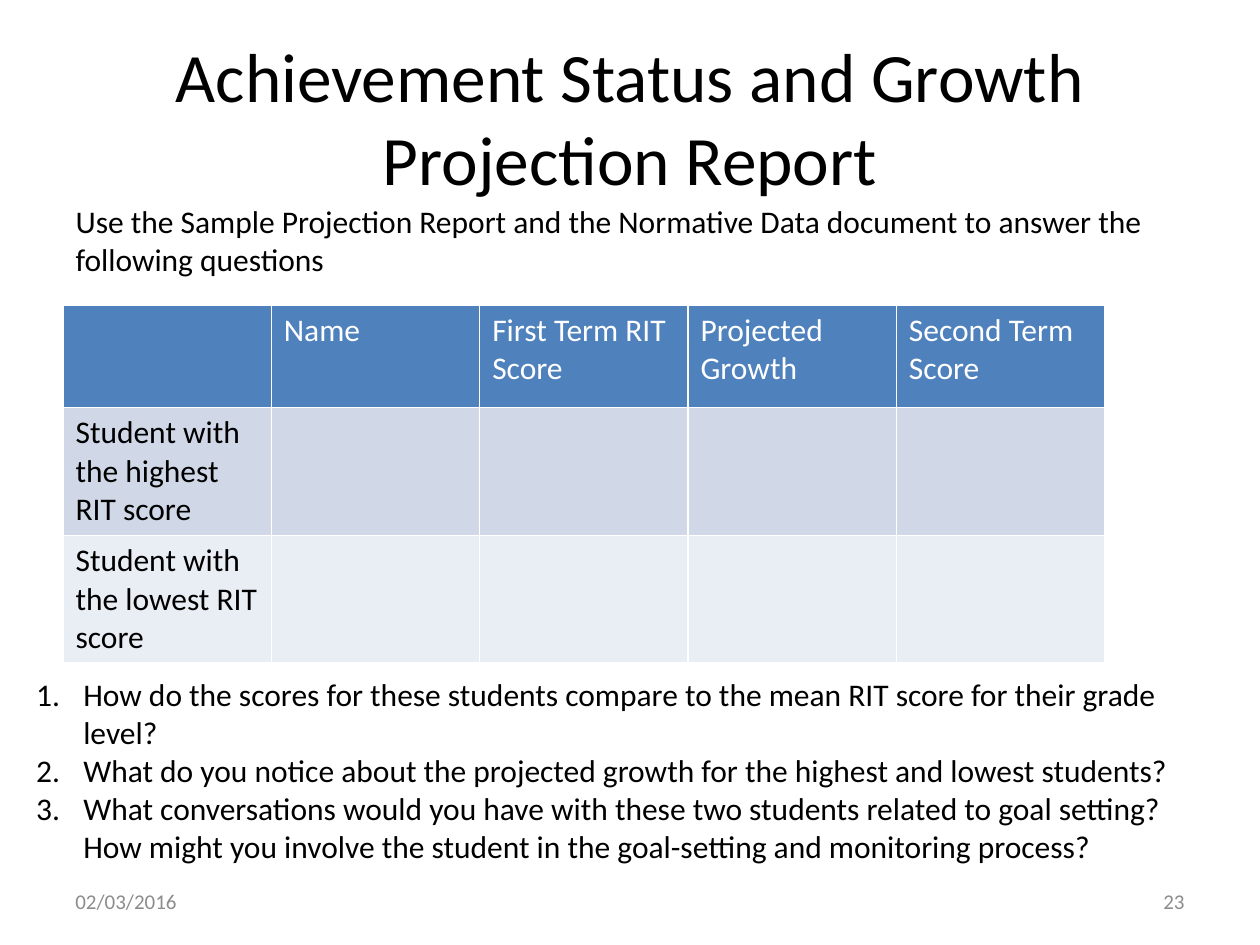
"""Build the achievement status and growth projection report slide."""
from lxml.etree import SubElement
from pptx import Presentation
from pptx.dml.color import RGBColor
from pptx.enum.text import MSO_ANCHOR, MSO_AUTO_SIZE, PP_ALIGN
from pptx.oxml.ns import qn
from pptx.util import Cm, Pt


def rgb(color):
    """Return a colour from a hex string."""
    return RGBColor.from_string(color)


def style(p, size, color="000000", align=PP_ALIGN.LEFT):
    """Format a paragraph and its runs."""
    p.alignment = align
    p.space_before = Pt(0)
    for r in p.runs:
        r.font.name = "Calibri"
        r.font.size = Pt(size)
        r.font.bold = False
        r.font.color.rgb = rgb(color)


prs = Presentation()
prs.slide_width, prs.slide_height = Cm(25.4), Cm(19.05)
s = prs.slides.add_slide(prs.slide_layouts[1])

title, body = s.placeholders
title.left, title.top, title.width, title.height = Cm(1.27), Cm(0.76), Cm(22.86), Cm(3.18)
body.left, body.top, body.width, body.height = Cm(1.27), Cm(3.94), Cm(22.86), Cm(9.35)
title.text_frame.text = "Achievement Status and Growth Projection Report"
title.text_frame.vertical_anchor = MSO_ANCHOR.MIDDLE
body.text_frame.text = (
    "Use the Sample Projection Report and the Normative Data document "
    "to answer the following questions"
)
for sp in (title, body):
    sp.text_frame.auto_size = MSO_AUTO_SIZE.NONE
style(title.text_frame.paragraphs[0], 39.6, align=PP_ALIGN.CENTER)
p = body.text_frame.paragraphs[0]
pPr = p._p.get_or_add_pPr()
pPr.set("marL", "0")
pPr.set("indent", "0")
SubElement(pPr, qn("a:buNone"))
style(p, 18)

rows = [
    ["", "Name", "First Term RIT Score", "Projected Growth", "Second Term Score"],
    ["Student with the highest RIT score", "", "", "", ""],
    ["Student with the lowest RIT score", "", "", "", ""],
]
fills = ["4F81BD", "D0D8E8", "E9EDF4"]
heights = [2.06, 2.54, 2.54]
table = s.shapes.add_table(3, 5, Cm(1.27), Cm(6.15), Cm(21), Cm(7.14)).table
for i, (texts, fill, height) in enumerate(zip(rows, fills, heights)):
    table.rows[i].height = Cm(height)
    for cell, text in zip(table.rows[i].cells, texts):
        cell.fill.solid()
        cell.fill.fore_color.rgb = rgb(fill)
        cell.text_frame.text = text
        style(cell.text_frame.paragraphs[0], 18, "000000" if i else "FFFFFF")

questions = [
    "How do the scores for these students compare to the mean RIT score for their grade level?",
    "What do you notice about the projected growth for the highest and lowest students?",
    "What conversations would you have with these two students related to goal setting? "
    "How might you involve the student in the goal-setting and monitoring process?",
]
tf = s.shapes.add_textbox(Cm(0.48), Cm(13.49), Cm(24.41), Cm(5.13)).text_frame
tf.word_wrap = True
for i, question in enumerate(questions):
    p = tf.add_paragraph() if i else tf.paragraphs[0]
    p.text = question
    pPr = p._p.get_or_add_pPr()
    pPr.set("marL", str(Cm(0.95)))
    pPr.set("indent", str(-Cm(0.95)))
    SubElement(pPr, qn("a:buFont"), typeface="+mj-lt")
    SubElement(pPr, qn("a:buAutoNum"), type="arabicPeriod")
    style(p, 18)

footers = [(1.27, "02/03/2016", PP_ALIGN.LEFT), (18.21, "23", PP_ALIGN.RIGHT)]
for left, text, align in footers:
    tf = s.shapes.add_textbox(Cm(left), Cm(17.65), Cm(5.92), Cm(1.02)).text_frame
    tf.word_wrap = True
    tf.vertical_anchor = MSO_ANCHOR.MIDDLE
    tf.text = text
    style(tf.paragraphs[0], 12, "8C8C8C", align)

prs.save("out.pptx")
